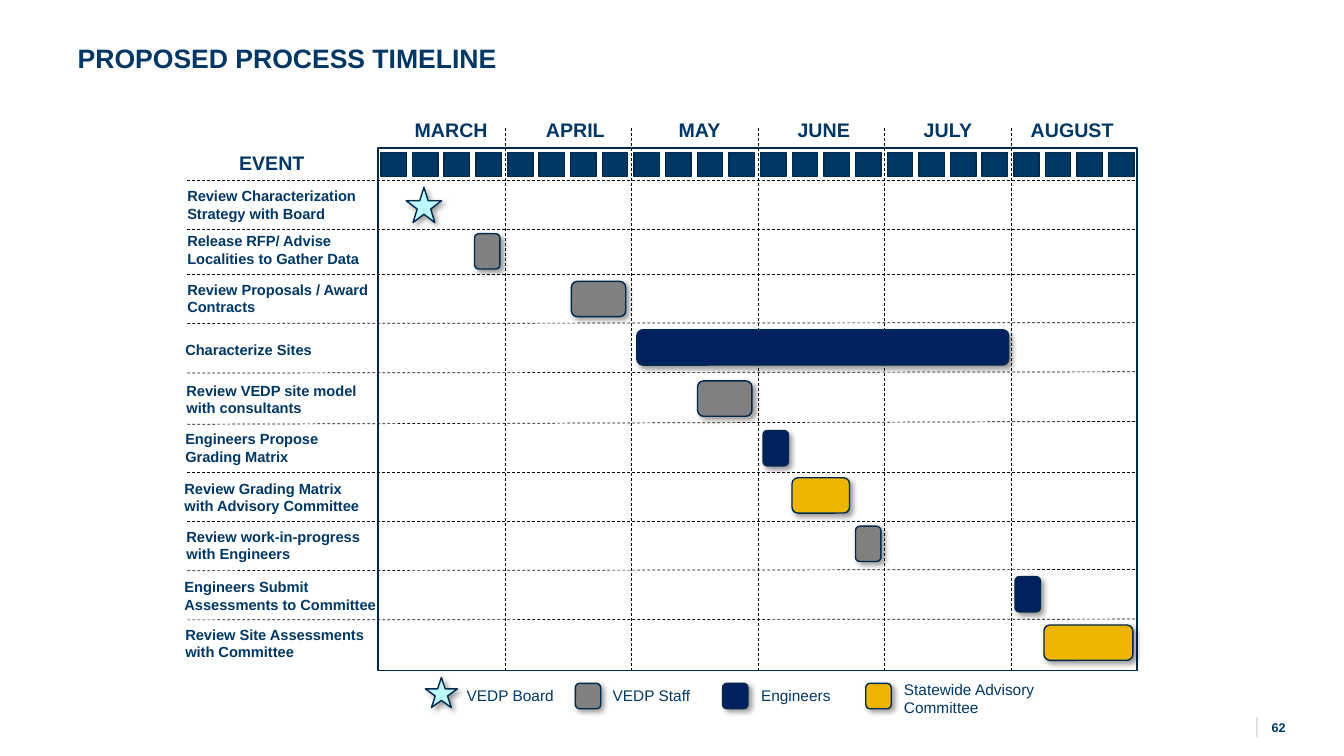
from dataclasses import dataclass

from lxml.etree import SubElement
from pptx import Presentation
from pptx.dml.color import RGBColor
from pptx.enum.dml import MSO_LINE
from pptx.enum.shapes import MSO_CONNECTOR, MSO_SHAPE
from pptx.enum.text import MSO_ANCHOR, PP_ALIGN
from pptx.oxml.ns import qn
from pptx.util import Cm, Pt

COLORS = {
    "text": "003764", "outline": "00294B", "week": "003865",
    "rule": "000000", "divider": "E1E1E1", "shadow": "000000",
    "board": "BDFAFF", "staff": "808080", "engineers": "002060",
    "committee": "EEB500",
}
FRAME_LEFT, FRAME_TOP, FRAME_WIDTH, FRAME_HEIGHT = 9.53, 3.73, 19.13, 13.16
FRAME_BOTTOM = FRAME_TOP + FRAME_HEIGHT
MONTHS = ["MARCH", "APRIL", "MAY", "JUNE", "JULY", "AUGUST"]
MONTH_PITCH = 3.19
WEEKS_PER_MONTH = 4
WEEK_PITCH = MONTH_PITCH / WEEKS_PER_MONTH
BAR_HEIGHT = 0.89


@dataclass
class Event:
    label: str
    label_left: float
    label_top: float
    owner: str
    start: float
    length: float
    bar_top: float
    rule_left_y: float   # dashed rule above the event
    rule_right_y: float
    label_width: float = 4.65


EVENTS = [
    Event("Review Characterization Strategy with Board", 4.72, 4.7,
          "board", 10.24, 0.89, 4.72, 4.55, 4.55),
    Event("Release RFP/ Advise Localities to Gather Data", 4.72, 5.84,
          "staff", 11.96, 0.64, 5.89, 5.77, 5.77),
    Event("Review Proposals / Award Contracts", 4.72, 7.06,
          "staff", 14.4, 1.37, 7.09, 6.91, 6.91),
    Event("Characterize Sites", 4.67, 8.36,
          "engineers", 16.05, 9.37, 8.31, 8.15, 8.13),
    Event("Review VEDP site model with consultants", 4.7, 9.6,
          "staff", 17.58, 1.37, 9.6, 9.4, 9.37),
    Event("Engineers Propose Grading Matrix", 4.67, 10.82,
          "engineers", 19.23, 0.64, 10.85, 10.69, 10.62),
    Event("Review Grading Matrix with Advisory Committee", 4.65, 12.07,
          "committee", 19.96, 1.45, 12.04, 11.91, 11.91),
    Event("Review work-in-progress with Engineers", 4.7, 13.28,
          "staff", 21.56, 0.64, 13.26, 13.13, 13.13),
    Event("Engineers Submit Assessments to Committee", 4.65, 14.55,
          "engineers", 25.58, 0.64, 14.53, 14.38, 14.35, 4.93),
    Event("Review Site Assessments with Committee", 4.67, 15.75,
          "committee", 26.31, 2.24, 15.75, 15.62, 15.6),
]

# owner, marker box, caption, caption box
LEGEND = [
    ("board", (10.72, 17.07, 0.81, 0.76), "VEDP Board", (11.76, 17.17, 2.51, 0.69)),
    ("staff", (14.5, 17.22, 0.64, 0.64), "VEDP Staff", (15.44, 17.17, 2.51, 0.69)),
    ("engineers", (18.21, 17.22, 0.64, 0.64), "Engineers", (19.18, 17.17, 2.51, 0.69)),
    ("committee", (21.82, 17.22, 0.64, 0.64), "Statewide Advisory Committee",
     (22.78, 17.25, 4.6, 0.69)),
]


def color(key):
    return RGBColor.from_string(COLORS[key])


def apply_formats(target, formats):
    for attribute, value in formats.items():
        setattr(target, attribute, value)


def add_text(slide, text, box, size, bold=True, align=PP_ALIGN.LEFT,
             anchor=MSO_ANCHOR.MIDDLE, spacing=1.0):
    frame = slide.shapes.add_textbox(*map(Cm, box)).text_frame
    apply_formats(frame, {"word_wrap": True, "vertical_anchor": anchor,
                          "margin_left": 0, "margin_right": 0})
    paragraph = frame.paragraphs[0]
    apply_formats(paragraph, {"alignment": align, "line_spacing": spacing})
    run = paragraph.add_run()
    run.text = text
    apply_formats(run.font, {"name": "Arial", "size": Pt(size), "bold": bold})
    run.font.color.rgb = color("text")


def add_line(slide, start, end, color_key="rule", width=0.5, dash=MSO_LINE.DASH):
    line = slide.shapes.add_connector(MSO_CONNECTOR.STRAIGHT, *map(Cm, start + end))
    line.line.color.rgb = color(color_key)
    apply_formats(line.line, {"width": Pt(width), "dash_style": dash})
    SubElement(line._element.spPr, qn("a:effectLst"))


def add_outlined(shapes, preset, box, fill_key=None):
    shape = shapes.add_shape(preset, *map(Cm, box))
    shape.shadow.inherit = False
    if fill_key:
        shape.fill.solid()
        shape.fill.fore_color.rgb = color(fill_key)
    else:
        shape.fill.background()
    shape.line.color.rgb = color("outline")
    shape.line.width = Pt(1)
    return shape


def add_marker(slide, owner, box):
    preset = MSO_SHAPE.STAR_5_POINT if owner == "board" else MSO_SHAPE.ROUNDED_RECTANGLE
    marker = add_outlined(slide.shapes, preset, box, owner)
    effects = marker._element.spPr.find(qn("a:effectLst"))
    shadow = SubElement(effects, qn("a:outerShdw"), blurRad=str(Pt(4)),
                        dist=str(Pt(3)), dir=str(45 * 60000), algn="tl",
                        rotWithShape="0")
    tint = SubElement(shadow, qn("a:srgbClr"), val=COLORS["shadow"])
    SubElement(tint, qn("a:alpha"), val="40000")


def add_calendar(slide):
    add_outlined(slide.shapes, MSO_SHAPE.RECTANGLE,
                 (FRAME_LEFT, FRAME_TOP, FRAME_WIDTH, FRAME_HEIGHT))
    add_text(slide, "EVENT", (5.77, 3.48, 2.16, 1.22), 14, align=PP_ALIGN.CENTER)
    for index, month in enumerate(MONTHS):
        add_text(slide, month, (10.29 + index * 3.13, 2.67, 2.16, 1.22), 14,
                 align=PP_ALIGN.CENTER)
        if index:
            divider = 9.54 + index * MONTH_PITCH
            add_line(slide, (divider, 3.23), (divider, FRAME_BOTTOM))
        weeks = slide.shapes.add_group_shape()
        for week in range(WEEKS_PER_MONTH):
            week_left = 9.6 + index * MONTH_PITCH + week * WEEK_PITCH
            add_outlined(weeks.shapes, MSO_SHAPE.RECTANGLE,
                         (week_left, 3.84, 0.64, 0.61), "week")


def add_event(slide, event):
    add_line(slide, (4.72, event.rule_left_y), (28.65, event.rule_right_y))
    add_text(slide, event.label,
             (event.label_left, event.label_top, event.label_width, 0.91), 10.5)
    add_marker(slide, event.owner,
               (event.start, event.bar_top, event.length, BAR_HEIGHT))


def main():
    presentation = Presentation()
    apply_formats(presentation, {"slide_width": Cm(33.87), "slide_height": Cm(19.05)})
    slide = presentation.slides.add_slide(presentation.slide_layouts[6])

    # Title and page number
    add_text(slide, "PROPOSED PROCESS TIMELINE", (1.96, 1.02, 28.7, 1.7), 19,
             anchor=MSO_ANCHOR.TOP, spacing=0.9)
    add_line(slide, (31.67, 18.08), (31.67, 18.57), "divider", 1.5, MSO_LINE.SOLID)
    add_text(slide, "62", (32.05, 18.01, 1.7, 0.64), 9, anchor=MSO_ANCHOR.TOP)

    # Timeline
    add_calendar(slide)
    for event in EVENTS:
        add_event(slide, event)

    # Legend
    for owner, marker_box, caption, caption_box in LEGEND:
        add_marker(slide, owner, marker_box)
        add_text(slide, caption, caption_box, 11, bold=False)

    presentation.save("out.pptx")


if __name__ == "__main__":
    main()
